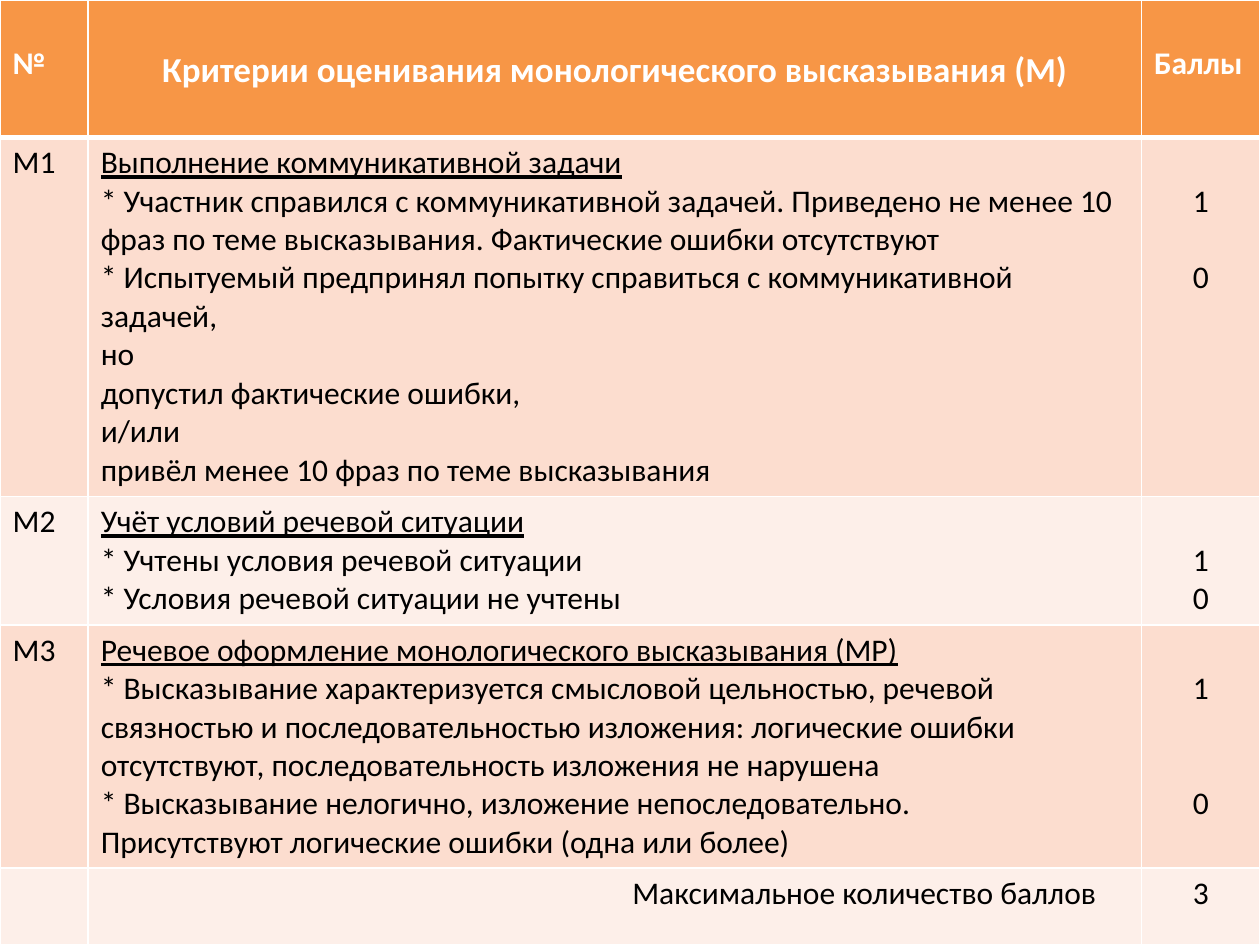
from dataclasses import dataclass

from lxml import etree
from pptx import Presentation
from pptx.dml.color import RGBColor
from pptx.enum import text
from pptx.oxml import ns
from pptx.util import Inches, Pt

LEFT, CENTER, RIGHT = text.PP_ALIGN.LEFT, text.PP_ALIGN.CENTER, text.PP_ALIGN.RIGHT


@dataclass(frozen=True)
class Theme:
    font: str = "Calibri"
    body: int = 18
    heading: int = 20
    line: float = 1.22  # line height relative to type size
    white: str = "FFFFFF"
    black: str = "000000"
    header: str = "F79646"
    bands: tuple[str, str] = ("FCDDCF", "FDEFE9")
    rule: int = 1
    header_rule: int = 3


@dataclass(frozen=True)
class Cell:
    lines: tuple[str, ...] = ()
    align: text.PP_ALIGN = LEFT
    size: int = 18
    underline_first: bool = False
    lines_above: int = 0
    gap_lines: int = 0
    right_margin: float = 0.1


@dataclass(frozen=True)
class Row:
    height: float
    cells: tuple[Cell, Cell, Cell]


T = Theme()
COLUMNS = (0.7, 8.36, 0.94)


def criterion(height: float, code: str, lines: tuple[str, ...], gap_lines: int) -> Row:
    """A criterion row; its scores 1 and 0 are gap_lines apart."""
    return Row(height, (
        Cell((code,)),
        Cell(lines, underline_first=True),
        Cell(("1", "0"), CENTER, lines_above=1, gap_lines=gap_lines),
    ))


ROWS = (
    Row(1.09, (
        Cell(("№",), lines_above=1),
        Cell(("Критерии оценивания монологического высказывания (М)",), CENTER,
             T.heading, lines_above=1),
        Cell(("Баллы",), lines_above=1),
    )),
    criterion(2.85, "М1", (
        "Выполнение коммуникативной задачи",
        "* Участник справился с коммуникативной задачей. Приведено не менее 10 "
        "фраз по теме высказывания. Фактические ошибки отсутствуют",
        "* Испытуемый предпринял попытку справиться с коммуникативной задачей,",
        "но",
        "допустил фактические ошибки,",
        "и/или",
        "привёл менее 10 фраз по теме высказывания",
    ), gap_lines=1),
    criterion(1.02, "М2", (
        "Учёт условий речевой ситуации",
        "* Учтены условия речевой ситуации",
        "* Условия речевой ситуации не учтены",
    ), gap_lines=0),
    criterion(1.93, "М3", (
        "Речевое оформление монологического высказывания (МР)",
        "* Высказывание характеризуется смысловой цельностью, речевой связностью "
        "и последовательностью изложения: логические ошибки отсутствуют, "
        "последовательность изложения не нарушена",
        "* Высказывание нелогично, изложение непоследовательно.",
        "Присутствуют логические ошибки (одна или более)",
    ), gap_lines=2),
    Row(0.61, (
        Cell(),
        Cell(("Максимальное количество баллов",), RIGHT, right_margin=0.36),
        Cell(("3",), CENTER),
    )),
)


def set_borders(cell, top: int, bottom: int) -> None:
    """Must run before the fill is set: borders come first in a:tcPr."""
    tc_pr = cell._tc.get_or_add_tcPr()
    for side, width in (("L", T.rule), ("R", T.rule), ("T", top), ("B", bottom)):
        ln = etree.SubElement(tc_pr, ns.qn(f"a:ln{side}"), w=str(Pt(width)))
        fill = etree.SubElement(ln, ns.qn("a:solidFill"))
        etree.SubElement(fill, ns.qn("a:srgbClr"), val=T.white)


def draw_cell(cell, item: Cell, row: int) -> None:
    is_header = row == 0
    set_borders(cell, T.header_rule if row == 1 else T.rule,
                T.header_rule if is_header else T.rule)
    cell.fill.solid()
    cell.fill.fore_color.rgb = RGBColor.from_string(
        T.header if is_header else T.bands[(row - 1) % 2])
    line = item.size * T.line
    cell.margin_top = Inches(0.05) + Pt(item.lines_above * line)
    cell.margin_right = Inches(item.right_margin)

    tf = cell.text_frame
    tf.text = "\n".join(item.lines)
    for i, p in enumerate(tf.paragraphs):
        p.alignment = item.align
        p.font.size = Pt(item.size)
        if i and item.gap_lines:
            p.space_before = Pt(item.gap_lines * line)
        for r in p.runs:
            r.font.name = T.font
            r.font.size = Pt(item.size)
            r.font.bold = is_header
            r.font.underline = item.underline_first and i == 0
            r.font.color.rgb = RGBColor.from_string(T.white if is_header else T.black)


def main() -> None:
    prs = Presentation()
    prs.slide_width, prs.slide_height = Inches(10), Inches(7.5)
    s = prs.slides.add_slide(prs.slide_layouts[6])
    table = s.shapes.add_table(len(ROWS), len(COLUMNS), 0, 0,
                               prs.slide_width, prs.slide_height).table
    for column, width in zip(table.columns, COLUMNS):
        column.width = Inches(width)
    for i, row in enumerate(ROWS):
        table.rows[i].height = Inches(row.height)
        for j, item in enumerate(row.cells):
            draw_cell(table.cell(i, j), item, i)
    prs.save("out.pptx")


if __name__ == "__main__":
    main()
